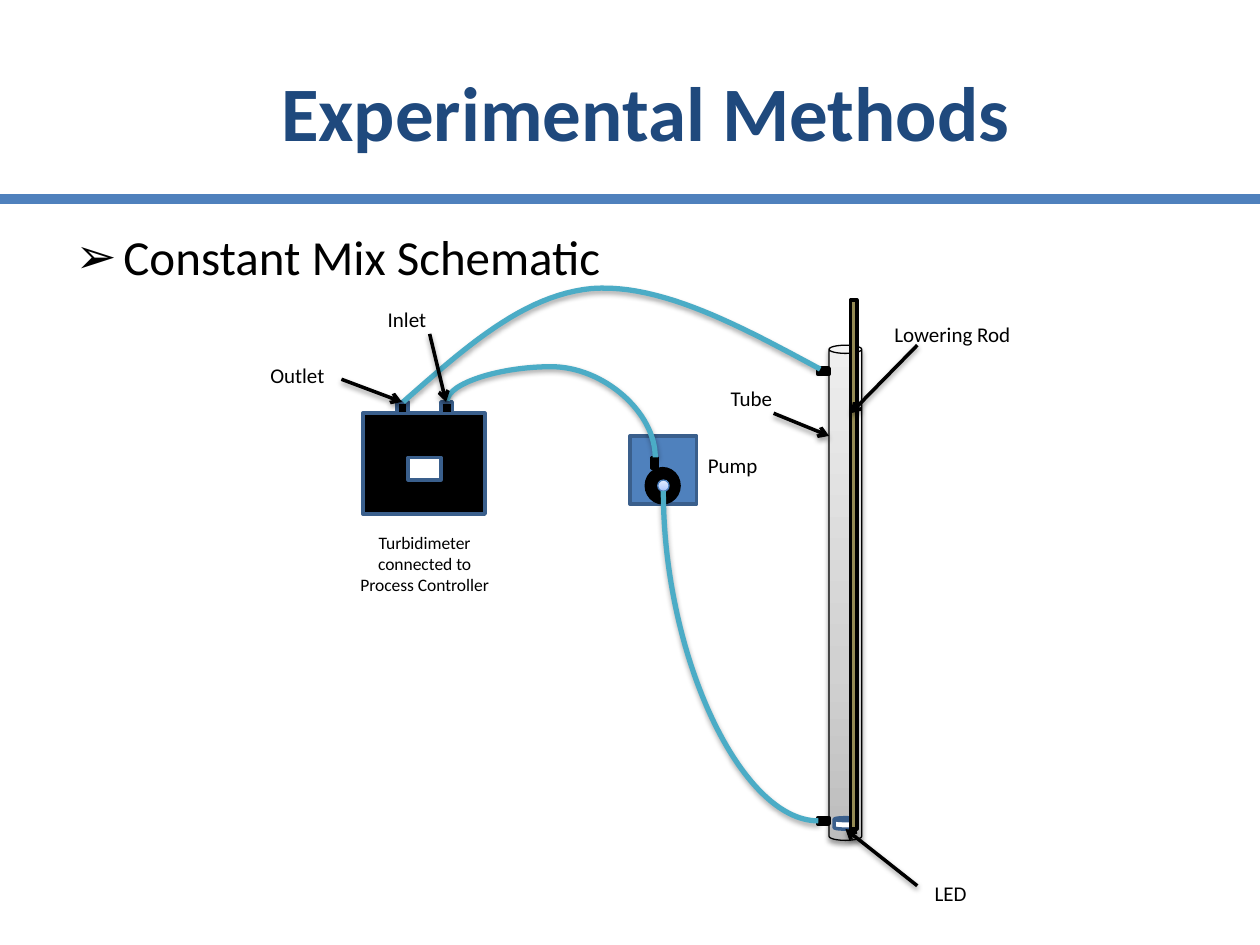
"""Builds the Experimental Methods slide with its constant mix schematic."""
from copy import deepcopy
from dataclasses import dataclass

from lxml.etree import SubElement
from pptx import Presentation
from pptx.dml.color import RGBColor
from pptx.enum.shapes import MSO_CONNECTOR, MSO_SHAPE
from pptx.enum.text import MSO_ANCHOR, MSO_AUTO_SIZE, PP_ALIGN
from pptx.oxml.ns import qn
from pptx.util import Inches, Pt


@dataclass(frozen=True)
class Theme:
    font: str = "Calibri"
    title: str = "1F497D"
    blue: str = "4F81BD"
    edge: str = "3A5F8C"
    dial: str = "4B7EBC"
    hose: str = "4BACC6"
    rod: str = "948A54"
    black: str = "000000"
    white: str = "FFFFFF"
    tube_stops: tuple = ("BDBDBD", "D1D1D1", "EEEEEE")
    dial_stops: tuple = ("A4C4FF", "BFD4FF", "E6EEFF")
    title_size: int = 44
    body_size: int = 28
    label_size: int = 12
    note_size: int = 10


T = Theme()


def set_line(sp, color, width, shadow=0):
    """Outline a shape and give it a shadow of the given opacity in percent."""
    sp.line.color.rgb = RGBColor.from_string(color)
    sp.line.width = Pt(width)
    effects = SubElement(sp._element.spPr, qn("a:effectLst"))
    if shadow:
        outer = SubElement(effects, qn("a:outerShdw"), blurRad=str(Pt(3.1)),
                           dist=str(Pt(1.7)), dir="5400000", rotWithShape="0")
        clr = SubElement(outer, qn("a:srgbClr"), val=T.black)
        SubElement(clr, qn("a:alpha"), val=str(shadow * 1000))


def set_text(p, text, size, color, align):
    """Fill a paragraph with text in the theme font."""
    p.text = text
    p.alignment = align
    p.font.name = T.font
    p.font.size = Pt(size)
    p.font.color.rgb = RGBColor.from_string(color)


prs = Presentation()
prs.slide_width, prs.slide_height = Inches(10), Inches(7.5)
s = prs.slides.add_slide(prs.slide_layouts[1])

rule = s.shapes.add_connector(MSO_CONNECTOR.STRAIGHT, 0, Inches(1.58), Inches(10), Inches(1.58))
set_line(rule, T.blue, 6)

title, body = s.placeholders
title.left, title.top, title.width, title.height = map(Inches, (0.5, 0.25, 9.25, 1.25))
title.text_frame.vertical_anchor = MSO_ANCHOR.MIDDLE
p = title.text_frame.paragraphs[0]
set_text(p, "Experimental Methods", T.title_size, T.title, PP_ALIGN.CENTER)
p.font.bold = True

body.left, body.top, body.width, body.height = map(Inches, (0.5, 1.75, 9.25, 4.95))
p = body.text_frame.paragraphs[0]
set_text(p, "Constant Mix Schematic", T.body_size, T.black, PP_ALIGN.LEFT)
pPr = p._p.get_or_add_pPr()
pPr.set("marL", str(Inches(0.38)))
pPr.set("indent", str(-Inches(0.38)))
bullet = pPr.makeelement(qn("a:buChar"), {"char": "➢"})
pPr.insert_element_before(bullet, "a:tabLst", "a:defRPr", "a:extLst")

RECT, OVAL, CAN = MSO_SHAPE.RECTANGLE, MSO_SHAPE.OVAL, MSO_SHAPE.CAN
parts = [
    (RECT, 2.88, 3.28, 0.97, 0.8, T.black, T.edge, 2),
    (RECT, 3.24, 3.63, 0.26, 0.18, T.white, T.edge, 2),
    (RECT, 3.15, 3.19, 0.09, 0.09, T.black, T.edge, 2),
    (RECT, 3.5, 3.19, 0.09, 0.09, T.black, T.edge, 2),
    (RECT, 5, 3.46, 0.53, 0.54, T.blue, T.edge, 2),
    (OVAL, 5.13, 3.72, 0.26, 0.27, T.black, T.black, 2),
    (RECT, 5.17, 3.63, 0.05, 0.09, T.black, T.black, 2),
    (OVAL, 5.22, 3.81, 0.09, 0.09, T.dial_stops, T.dial, 0.75),
    (CAN, 6.58, 2.74, 0.26, 3.93, T.tube_stops, T.black, 0.75),
    (CAN, 6.62, 6.49, 0.18, 0.09, T.white, T.edge, 2),
    (RECT, 6.75, 2.38, 0.05, 4.2, T.rod, T.black, 2),
    (RECT, 6.49, 2.92, 0.09, 0.05, T.black, T.black, 2),
    (RECT, 6.49, 6.49, 0.09, 0.05, T.black, T.black, 2),
]
for kind, x, y, w, h, fill, edge, width in parts:
    sp = s.shapes.add_shape(kind, *map(Inches, (x, y, w, h)))
    graded = isinstance(fill, tuple)
    if graded:
        sp.fill.gradient()
        sp.fill.gradient_angle = 90
        stops = sp._element.spPr.find(".//" + qn("a:gsLst"))
        stops.insert(1, deepcopy(stops[0]))
        for stop, color, position in zip(sp.fill.gradient_stops, fill, (0, 0.35, 1)):
            stop.color.rgb = RGBColor.from_string(color)
            stop.position = position
    else:
        sp.fill.solid()
        sp.fill.fore_color.rgb = RGBColor.from_string(fill)
    set_line(sp, edge, width, 38 if graded else 0)

hoses = [
    ("curvedConnector3", 4.15, 2.58, 0.45, 1.65, -60000),
    ("curvedConnector2", 4.57, 4.59, 2.62, 1.23, None),
]
for preset, x, y, w, h, adjust in hoses:
    hose = s.shapes.add_connector(MSO_CONNECTOR.CURVE, *map(Inches, (x, y, x + w, y + h)))
    spPr = hose._element.spPr
    spPr.xfrm.set("rot", "16200000")
    spPr.xfrm.set("flipH", "1")
    geom = spPr.find(qn("a:prstGeom"))
    geom.set("prst", preset)
    if adjust is not None:
        SubElement(geom.find(qn("a:avLst")), qn("a:gd"), name="adj1", fmla=f"val {adjust}")
    set_line(hose, T.hose, 3, 35)

return_curves = [
    ((6.51, 2.93), (5.88, 2.59), (5.25, 2.25), (4.7, 2.29)),
    ((4.7, 2.29), (4.15, 2.34), (3.68, 2.77), (3.2, 3.19)),
]
steps = 24
points = []
for curve in return_curves:
    for i in range(1, steps + 1):
        t = i / steps
        weights = ((1 - t) ** 3, 3 * t * (1 - t) ** 2, 3 * t ** 2 * (1 - t), t ** 3)
        points.append([Inches(sum(k * v for k, v in zip(weights, axis))) for axis in zip(*curve)])
builder = s.shapes.build_freeform(Inches(6.51), Inches(2.93))
builder.add_line_segments(points, close=False)
return_hose = builder.convert_to_shape()
return_hose.fill.background()
set_line(return_hose, T.hose, 3, 35)

arrows = [
    (7.28, 7.03, 6.71, 6.58),
    (7.28, 2.74, 6.75, 3.28),
    (6.14, 3.28, 6.58, 3.46),
    (3.41, 2.65, 3.54, 3.19),
    (2.71, 3.01, 3.19, 3.19),
]
for ends in arrows:
    arrow = s.shapes.add_connector(MSO_CONNECTOR.STRAIGHT, *map(Inches, ends))
    set_line(arrow, T.black, 2, 38)
    SubElement(arrow.line._get_or_add_ln(), qn("a:tailEnd"), type="arrow")

LEFT, CENTER = PP_ALIGN.LEFT, PP_ALIGN.CENTER
labels = [
    ("Pump", 5.52, 3.54, 0.7, 0.32, T.label_size, LEFT),
    ("LED", 7.28, 6.94, 0.53, 0.32, T.label_size, CENTER),
    ("Lowering Rod", 7, 2.5, 1.25, 0.3, T.label_size, LEFT),
    ("Tube", 5.7, 3.01, 0.62, 0.32, T.label_size, LEFT),
    ("Turbidimeter connected to Process Controller", 2.71, 4.17, 1.32, 0.65, T.note_size, CENTER),
    ("Outlet", 1.92, 2.83, 0.88, 0.32, T.label_size, CENTER),
    ("Inlet", 2.88, 2.38, 0.7, 0.32, T.label_size, CENTER),
]
for text, x, y, w, h, size, align in labels:
    tf = s.shapes.add_textbox(*map(Inches, (x, y, w, h))).text_frame
    tf.word_wrap = True
    tf.auto_size = MSO_AUTO_SIZE.SHAPE_TO_FIT_TEXT
    set_text(tf.paragraphs[0], text, size, T.black, align)

prs.save("out.pptx")
